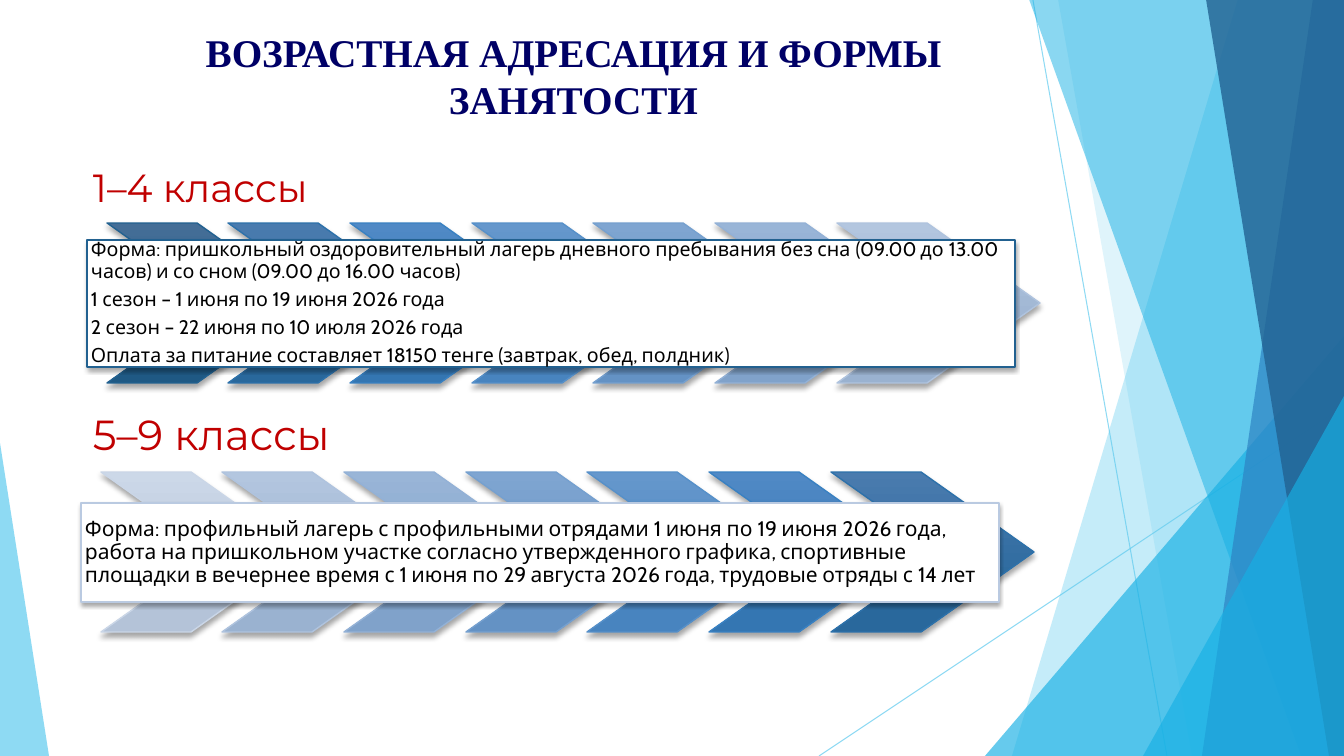
import pptx
import pptx.dml.color
import pptx.enum.shapes
import pptx.enum.text
import pptx.oxml.ns
import pptx.util
from lxml import etree

SCALE = 914400 / 100.8  # EMU in one px
WIDTH, HEIGHT = 1344, 756
SHAPES = pptx.enum.shapes.MSO_SHAPE
ALIGN = pptx.enum.text.PP_ALIGN
ANCHOR = pptx.enum.text.MSO_ANCHOR
qn = pptx.oxml.ns.qn


def px(length):
    return pptx.util.Emu(round(length * SCALE))


def colour(code):
    return pptx.dml.color.RGBColor.from_string(code)


def set_opacity(shape, percent):
    tone = next(shape.element.iter(qn("a:srgbClr")))
    etree.SubElement(tone, qn("a:alpha"), val=str(percent * 1000))


def write(frame, *lines, font="Cabin", size=14, ink="000000", bold=False,
          align=ALIGN.LEFT, anchor=ANCHOR.MIDDLE, inset=4, spacing=0.9):
    frame.word_wrap = True
    frame.auto_size = pptx.enum.text.MSO_AUTO_SIZE.NONE
    frame.vertical_anchor = anchor
    frame.margin_left = frame.margin_right = px(inset)
    frame.margin_top = frame.margin_bottom = px(inset)
    for index, line in enumerate(lines):
        para = frame.add_paragraph() if index else frame.paragraphs[0]
        para.alignment = align
        para.line_spacing = spacing
        para.space_before = pptx.util.Pt(0)
        if index < len(lines) - 1:
            para.space_after = pptx.util.Pt(5)
        span = para.add_run()
        span.text = line
        span.font.name = font
        span.font.size = pptx.util.Pt(size)
        span.font.bold = bold
        span.font.color.rgb = colour(ink)


class Page:
    """Style and drawing methods for the current slide."""
    red, navy = "C00000", "000066"
    sky, azure, blue, deep = "5FCBEF", "17B0E4", "2E83C3", "226292"

    def __init__(self, deck):
        self.slide = deck.slides.add_slide(deck.slide_layouts[5])
        self.shapes = self.slide.shapes

    def title(self, text, left, top, width, height):
        box = self.shapes.title
        box.left, box.top = px(left), px(top)
        box.width, box.height = px(width), px(height)
        write(box.text_frame, text, font="Times New Roman", size=28, bold=True,
              ink=self.navy, align=ALIGN.CENTER, anchor=ANCHOR.TOP, spacing=1.0)

    def ray(self, start, end):
        line = self.shapes.add_connector(
            pptx.enum.shapes.MSO_CONNECTOR.STRAIGHT, *map(px, start + end))
        line.line.color.rgb = colour(self.sky)
        line.line.width = pptx.util.Pt(0.75)
        set_opacity(line, 70)
        etree.SubElement(line.element.spPr, qn("a:effectLst"))

    def glass(self, shape, fill, opacity):
        shape.shadow.inherit = False
        shape.fill.solid()
        shape.fill.fore_color.rgb = colour(fill)
        set_opacity(shape, opacity)
        shape.line.fill.background()

    def band(self, top_left, top_right, bottom_left, fill, opacity):
        """Translucent strip that ends at the right edge of the slide."""
        builder = self.shapes.build_freeform(top_left, -1, scale=SCALE)
        builder.add_line_segments([(top_right, -1), (WIDTH, HEIGHT),
                                   (bottom_left, HEIGHT)])
        self.glass(builder.convert_to_shape(), fill, opacity)

    def triangle(self, left, top, width, apex, fill, opacity):
        shape = self.shapes.add_shape(
            SHAPES.ISOSCELES_TRIANGLE, px(left), px(top), px(width), px(HEIGHT - top))
        shape.adjustments[0] = apex
        self.glass(shape, fill, opacity)

    def raised(self, kind, left, top, width, height, edge, blur, distance):
        """Outlined shape with a soft shadow below it."""
        shape = self.shapes.add_shape(kind, px(left), px(top), px(width), px(height))
        shape.line.color.rgb = colour(edge)
        shape.line.width = pptx.util.Pt(1)
        shape.shadow.inherit = False
        effects = shape.element.spPr.find(qn("a:effectLst"))
        shadow = etree.SubElement(
            effects, qn("a:outerShdw"), blurRad=str(blur * 12700),
            dist=str(distance * 12700), dir="5400000", rotWithShape="0")
        tone = etree.SubElement(shadow, qn("a:srgbClr"), val="000000")
        etree.SubElement(tone, qn("a:alpha"), val="35000")
        return shape

    def chevrons(self, left, top, tones):
        for index, (light, dark, edge) in enumerate(tones):
            shape = self.raised(SHAPES.CHEVRON, left + index * 365 // 3, top,
                                203, 160, edge, blur=4, distance=3)
            shape.adjustments[0] = 0.706
            shape.fill.gradient()
            shape.fill.gradient_angle = 270
            for stop, tone, position in zip(shape.fill.gradient_stops,
                                            (light, dark), (0, 0.78)):
                stop.color.rgb = colour(tone)
                stop.position = position

    def caption(self, text, top, size):
        box = self.shapes.add_textbox(px(81), px(top), px(865), px(79))
        write(box.text_frame, text, font="Montserrat", size=size, ink=self.red,
              anchor=ANCHOR.BOTTOM, inset=12)

    def card(self, left, top, width, height, edge, lines, size):
        shape = self.raised(SHAPES.RECTANGLE, left, top, width, height, edge,
                            blur=3, distance=2)
        shape.fill.solid()
        shape.fill.fore_color.rgb = colour("FFFFFF")
        write(shape.text_frame, *lines, size=size)


# Gradient start, gradient end and outline, from dark to light
TONES = [
    ("456E97", "1F5984", "226190"), ("4A7BAE", "29689C", "2D71AA"),
    ("5089C5", "3476B2", "3981C2"), ("6597CC", "4884BF", "5690C9"),
    ("7FA5D1", "6492C4", "75A0CF"), ("99B5D7", "80A2CA", "93B1D6"),
    ("B3C6DF", "9AB2D0", "AFC3DE"), ("CCD8E8", "B4C3D8", "CAD6E7"),
]
JUNIOR = [
    "Форма: пришкольный оздоровительный лагерь дневного пребывания без сна "
    "(09.00 до 13.00 часов) и со сном (09.00 до 16.00 часов)",
    "1 сезон – 1 июня по 19 июня 2026 года",
    "2 сезон – 22 июня по 10 июля 2026 года",
    "Оплата за питание составляет 18150 тенге (завтрак, обед, полдник)",
]
SENIOR = [
    "Форма: профильный лагерь с профильными отрядами 1 июня по 19 июня 2026 года, "
    "работа на пришкольном участке согласно утвержденного графика, спортивные "
    "площадки в вечернее время с 1 июня по 29 августа 2026 года, трудовые отряды "
    "с 14 лет",
]


def main():
    deck = pptx.Presentation()
    deck.slide_width, deck.slide_height = px(WIDTH), px(HEIGHT)
    page = Page(deck)

    # Faceted background
    page.ray((1033, 0), (1167, HEIGHT))
    page.ray((WIDTH, 406), (819, HEIGHT))
    page.band(1238, WIDTH, 1012, page.sky, 36)
    page.band(1058, WIDTH, 1192, page.sky, 20)
    page.triangle(985, 336, 359, 1, page.azure, 66)
    page.band(1029, WIDTH, 1301, page.azure, 50)
    page.band(1313, WIDTH, 1202, page.blue, 70)
    page.band(1206, WIDTH, 1329, page.deep, 80)
    page.triangle(1143, 396, 201, 1, page.azure, 66)
    page.triangle(0, 443, 49, 0, page.sky, 70)

    # Title
    page.title("ВОЗРАСТНАЯ АДРЕСАЦИЯ И ФОРМЫ ЗАНЯТОСТИ", 80, 24, 987, 110)

    # Grades 1–4
    page.caption("1–4 классы", 144, 28)
    page.chevrons(107, 223, TONES[:7])
    page.card(87, 240, 928, 127, "226190", JUNIOR, 14)

    # Grades 5–9
    page.caption("5–9 классы", 393, 30)
    page.chevrons(101, 472, TONES[:0:-1])
    page.card(81, 503, 918, 99, "BACAE1", SENIOR, 15)

    deck.save("out.pptx")


if __name__ == "__main__":
    main()
